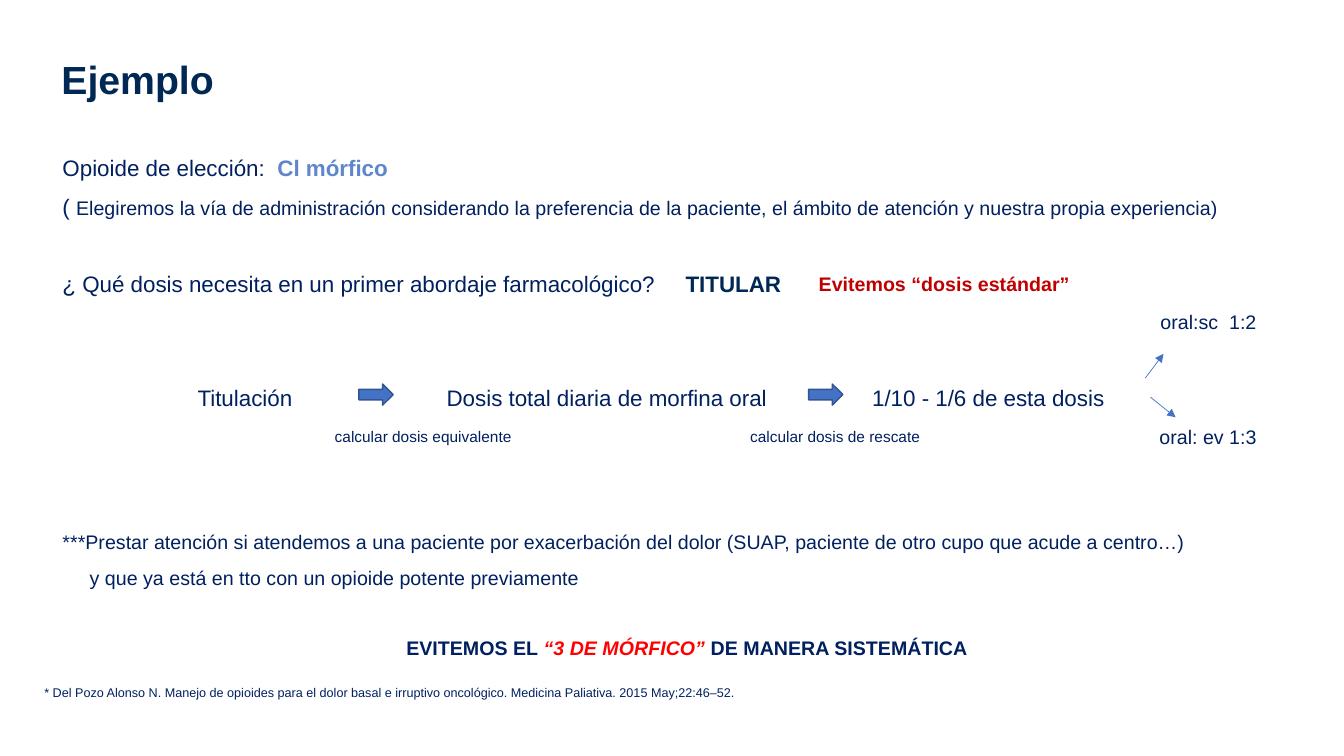
from lxml import etree
from pptx import Presentation
from pptx.dml.color import RGBColor
from pptx.enum.shapes import MSO_CONNECTOR, MSO_SHAPE
from pptx.enum.text import MSO_ANCHOR, PP_ALIGN
from pptx.oxml.ns import qn
from pptx.util import Inches, Pt

COLORS = {"navy": "002060", "title": "002855", "sky": "5F86CD", "dark_red": "C00000",
          "red": "FF0000", "arrow": "4472C4", "arrow_edge": "325491"}
FONT = "Arial"
TITLE = "Ejemplo"
MARGIN = 0.62
LABEL_HEIGHT = 0.36

# Each label: left, vertical centre, width, size, runs of (text, colour, style)
LABELS = [
    (MARGIN, 1.66, 5, 16, [("Opioide de elección:  ", "navy", ""), ("Cl mórfico", "sky", "b")]),
    (MARGIN, 2.05, 12.3, 14, [
        ("( ", "navy", "large"),
        ("Elegiremos la vía de administración considerando la preferencia de la paciente, "
         "el ámbito de atención y nuestra propia experiencia)", "navy", "")]),
    (MARGIN, 2.81, 6.1, 16,
     [("¿ Qué dosis necesita en un primer abordaje farmacológico?", "navy", "")]),
    (6.8, 2.81, 1.2, 16, [("TITULAR", "title", "b")]),
    (8.12, 2.81, 3, 14, [("Evitemos “dosis estándar”", "dark_red", "b")]),
    (11.51, 3.19, 1.3, 14, [("oral:sc  1:2", "navy", "")]),
    (1.96, 3.94, 1.2, 16, [("Titulación", "navy", "")]),
    (4.43, 3.94, 3.4, 16, [("Dosis total diaria de morfina oral", "navy", "")]),
    (8.65, 3.94, 2.6, 16, [("1/10 - 1/6 de esta dosis", "navy", "")]),
    (3.32, 4.33, 2.2, 11, [("calcular dosis equivalente", "navy", "")]),
    (7.44, 4.33, 2.2, 11, [("calcular dosis de rescate", "navy", "")]),
    (11.5, 4.33, 1.3, 14, [("oral: ev 1:3", "navy", "")]),
    (MARGIN, 5.37, 12.2, 14, [
        ("***Prestar atención si atendemos a una paciente por exacerbación del dolor "
         "(SUAP, paciente de otro cupo que acude a centro…)", "navy", "")]),
    (0.89, 5.73, 8, 14,
     [("y que ya está en tto con un opioide potente previamente", "navy", "")]),
    (4.03, 6.43, 6.5, 14, [
        ("EVITEMOS EL ", "navy", "b"), ("“3 DE MÓRFICO” ", "red", "bi"),
        ("DE MANERA SISTEMÁTICA", "navy", "b")]),
    (0.44, 6.87, 9.9, 9, [
        ("* Del Pozo Alonso N. Manejo de opioides para el dolor basal e irruptivo "
         "oncológico. Medicina Paliativa. 2015 May;22:46–52.", "navy", "")]),
]
BLOCK_ARROWS = [3.56, 8.02]
BRANCHES = [((11.36, 3.75), (11.54, 3.51)), ((11.41, 3.94), (11.66, 4.14))]


def color(name):
    return RGBColor.from_string(COLORS[name])


def style_run(r, size, color_name, bold=False, italic=False):
    r.font.name, r.font.size = FONT, Pt(size)
    r.font.bold, r.font.italic = bold, italic
    r.font.color.rgb = color(color_name)


def add_label(s, left, middle, width, size, runs):
    box = s.shapes.add_textbox(Inches(left), Inches(middle - LABEL_HEIGHT / 2),
                               Inches(width), Inches(LABEL_HEIGHT))
    tf = box.text_frame
    tf.word_wrap = True
    tf.vertical_anchor = MSO_ANCHOR.MIDDLE
    tf.margin_left = tf.margin_right = tf.margin_top = tf.margin_bottom = 0
    for text, color_name, style in runs:
        r = tf.paragraphs[0].add_run()
        r.text = text
        if style == "large":
            style_run(r, 16, color_name)
        else:
            style_run(r, size, color_name, "b" in style, "i" in style)


def add_block_arrow(s, left):
    sp = s.shapes.add_shape(MSO_SHAPE.RIGHT_ARROW, Inches(left), Inches(3.81),
                            Inches(0.34), Inches(0.21))
    sp.shadow.inherit = False
    sp.fill.solid()
    sp.fill.fore_color.rgb = color("arrow")
    sp.line.color.rgb = color("arrow_edge")
    sp.line.width = Pt(1)


def add_branch(s, start, end):
    line = s.shapes.add_connector(MSO_CONNECTOR.STRAIGHT, *map(Inches, start + end))
    line.line.color.rgb = color("arrow")
    line.line.width = Pt(0.5)
    etree.SubElement(line.line._get_or_add_ln(), qn("a:tailEnd"), type="triangle")
    etree.SubElement(line._element.spPr, qn("a:effectLst"))


def add_title(s):
    title = s.shapes.title
    title.left, title.top = Inches(0.51), Inches(0.5)
    title.width, title.height = Inches(10.98), Inches(0.88)
    tf = title.text_frame
    tf.text = TITLE
    tf.vertical_anchor = MSO_ANCHOR.TOP
    p = tf.paragraphs[0]
    p.alignment = PP_ALIGN.LEFT
    style_run(p.runs[0], 28, "title", bold=True)


def main():
    prs = Presentation()
    prs.slide_width, prs.slide_height = Inches(13.33), Inches(7.5)
    s = prs.slides.add_slide(prs.slide_layouts[5])
    add_title(s)
    for label in LABELS:
        add_label(s, *label)
    for left in BLOCK_ARROWS:
        add_block_arrow(s, left)
    for start, end in BRANCHES:
        add_branch(s, start, end)
    prs.save("out.pptx")


if __name__ == "__main__":
    main()
